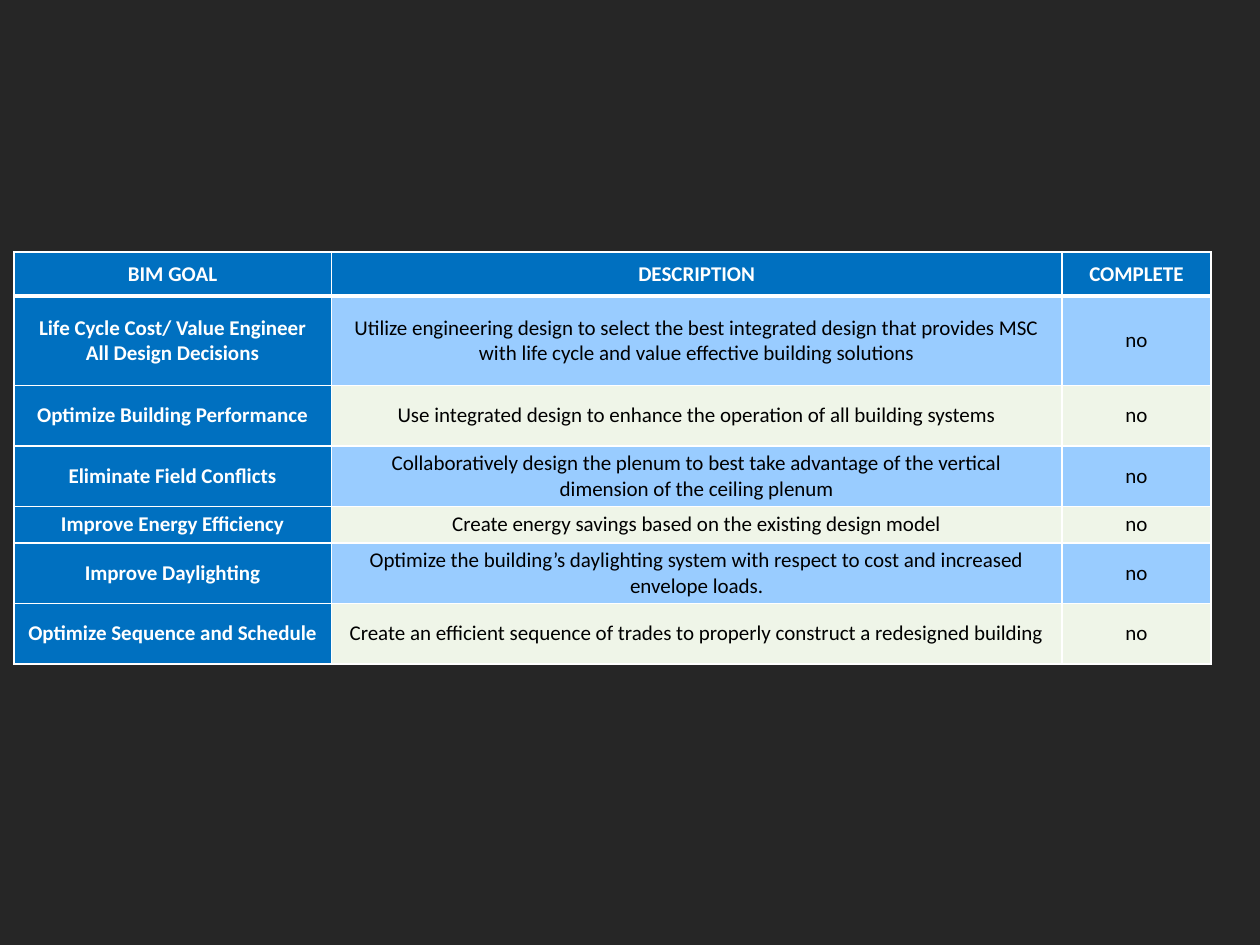
from lxml.etree import SubElement
from pptx import Presentation
from pptx.dml.color import RGBColor
from pptx.enum.text import MSO_ANCHOR, PP_ALIGN
from pptx.oxml.ns import qn
from pptx.util import Inches, Pt

COLORS = {
    "background": "262626",
    "heading": "0070C0",
    "odd": "99CCFF",
    "even": "EFF5E8",
    "white": "FFFFFF",
    "black": "000000",
}
COLUMN_WIDTHS = [2.52, 5.8, 1.18]
ROW_HEIGHTS = [0.35, 0.71, 0.48, 0.48, 0.29, 0.48, 0.48]
HEADER = ("BIM GOAL", "DESCRIPTION", "COMPLETE")
GOALS = [
    ("Life Cycle Cost/ Value Engineer All Design Decisions",
     "Utilize engineering design to select the best integrated design that "
     "provides MSC with life cycle and value effective building solutions"),
    ("Optimize Building Performance",
     "Use integrated design to enhance the operation of all building systems"),
    ("Eliminate Field Conflicts",
     "Collaboratively design the plenum to best take advantage of the vertical "
     "dimension of the ceiling plenum"),
    ("Improve Energy Efficiency",
     "Create energy savings based on the existing design model"),
    ("Improve Daylighting",
     "Optimize the building’s daylighting system with respect to cost and "
     "increased envelope loads."),
    ("Optimize Sequence and Schedule",
     "Create an efficient sequence of trades to properly construct a "
     "redesigned building"),
]


def color(name):
    return RGBColor.from_string(COLORS[name])


def add_borders(cell, top, bottom):
    properties = cell._tc.get_or_add_tcPr()
    widths = {"a:lnL": 1, "a:lnR": 1, "a:lnT": top, "a:lnB": bottom}
    for position, (side, width) in enumerate(widths.items()):
        line = SubElement(properties, qn(side), w=str(Pt(width)))
        fill = SubElement(line, qn("a:solidFill"))
        SubElement(fill, qn("a:srgbClr"), val=COLORS["white"])
        properties.insert(position, line)


def fill_cell(cell, text, fill, is_heading):
    cell.fill.solid()
    cell.fill.fore_color.rgb = color(fill)
    cell.vertical_anchor = MSO_ANCHOR.MIDDLE
    cell.margin_left = cell.margin_right = Inches(0.11)
    cell.margin_top = cell.margin_bottom = 0
    para = cell.text_frame.paragraphs[0]
    para.alignment = PP_ALIGN.CENTER
    span = para.add_run()
    span.text = text
    span.font.name = "Calibri"
    span.font.size = Pt(12)
    span.font.bold = is_heading
    span.font.color.rgb = color("white" if is_heading else "black")


def add_goal_table(page):
    rows = [HEADER] + [(goal, description, "no") for goal, description in GOALS]
    table = page.shapes.add_table(
        len(rows), len(HEADER), Inches(0.11), Inches(2),
        Inches(sum(COLUMN_WIDTHS)), Inches(sum(ROW_HEIGHTS))).table
    for column, width in zip(table.columns, COLUMN_WIDTHS):
        column.width = Inches(width)
    for row, height in zip(table.rows, ROW_HEIGHTS):
        row.height = Inches(height)
    for r, texts in enumerate(rows):
        band = "odd" if r % 2 else "even"
        for c, text in enumerate(texts):
            is_heading = r == 0 or c == 0
            cell = table.cell(r, c)
            fill_cell(cell, text, "heading" if is_heading else band, is_heading)
            add_borders(cell, 3 if r == 1 else 1, 3 if r == 0 else 1)


def main():
    deck = Presentation()
    deck.slide_width, deck.slide_height = Inches(10), Inches(7.5)
    page = deck.slides.add_slide(deck.slide_layouts[6])
    page.background.fill.solid()
    page.background.fill.fore_color.rgb = color("background")
    add_goal_table(page)
    deck.save("out.pptx")


if __name__ == "__main__":
    main()
